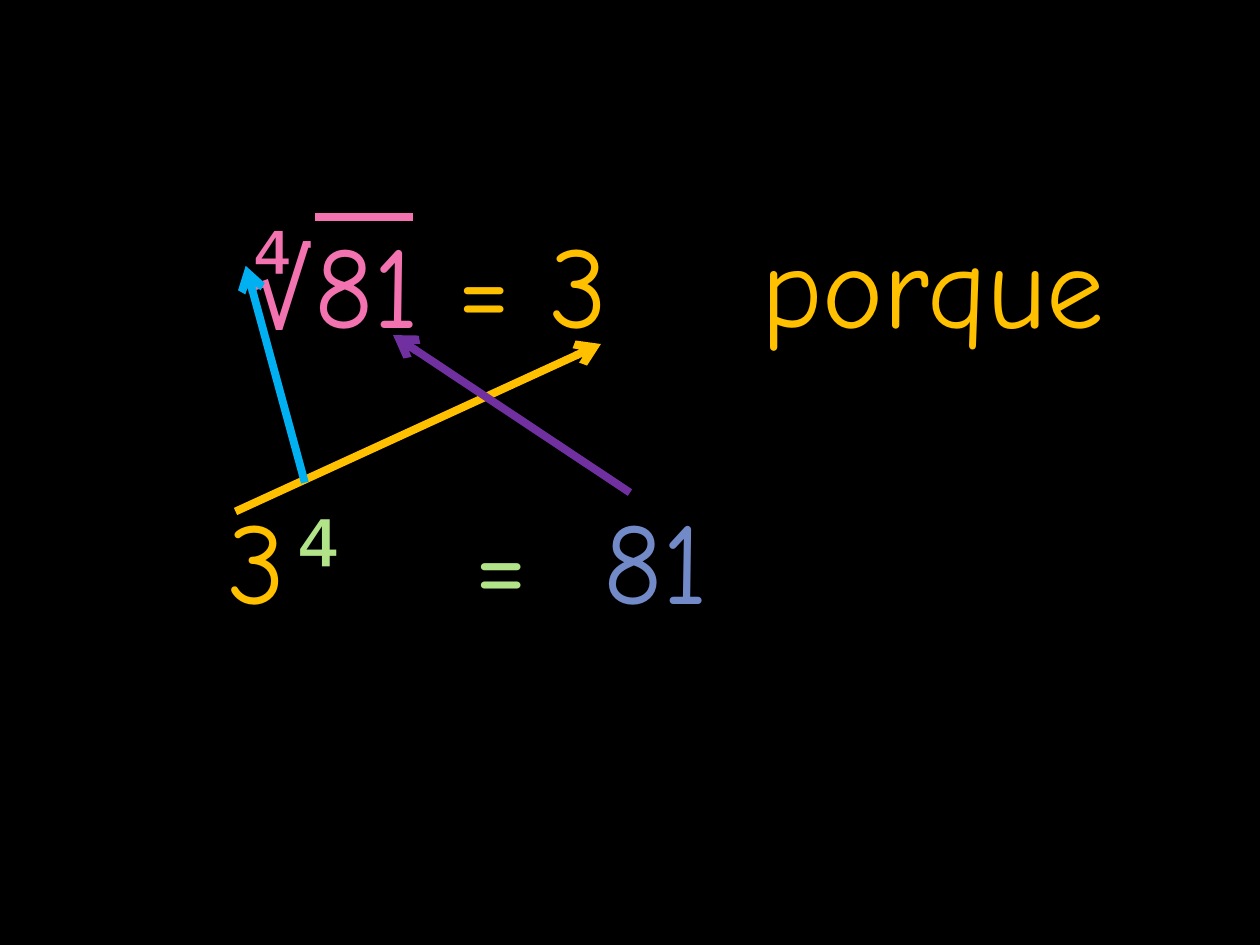
"""Build a slide that explains a fourth root through the matching power."""
import dataclasses

import pptx
import pptx.dml.color
import pptx.enum.shapes
import pptx.oxml
import pptx.oxml.ns
import pptx.util

Pt = pptx.util.Pt


@dataclasses.dataclass(frozen=True)
class Theme:
    back: str = "000000"
    gold: str = "FFC000"
    pink: str = "F273AF"
    green: str = "B2E389"
    blue: str = "738AC8"
    cyan: str = "00B0F0"
    purple: str = "7030A0"
    hand: str = "Comic Neue"
    mono: str = "DejaVu Sans Mono"
    root: float = 60
    size: float = 66
    line: float = 4.5


THEME = Theme()


@dataclasses.dataclass(frozen=True)
class Term:
    text: str
    color: str
    font: str = THEME.hand
    size: float = THEME.size


@dataclasses.dataclass(frozen=True)
class Row:
    terms: tuple[Term, ...]
    stops: tuple[float, ...]
    before: float = 0


@dataclasses.dataclass(frozen=True)
class Stroke:
    start: tuple[float, float]
    end: tuple[float, float]
    color: str
    arrow: bool = True


ROWS = (
    Row(
        (
            Term("\t∜", THEME.pink, THEME.mono, THEME.root),
            Term("81 ", THEME.pink),
            Term("= 3\tporque", THEME.gold),
        ),
        (102.5, 394),
    ),
    Row(
        (
            Term("\t3", THEME.gold),
            Term("⁴", THEME.green, THEME.mono),
            Term("\t=", THEME.green),
            Term("\t81", THEME.blue),
        ),
        (89, 230, 304),
        79,
    ),
)

STROKES = (
    Stroke((180, 123.8), (236, 123.8), THEME.pink, False),
    Stroke((134.6, 292.3), (343.4, 196.6), THEME.gold),
    Stroke((174.2, 275.8), (140.4, 151.9), THEME.cyan),
    Stroke((360, 281.5), (224.6, 191.5), THEME.purple),
)


def paint(name: str) -> pptx.dml.color.RGBColor:
    """Turn a hex name into a colour."""
    return pptx.dml.color.RGBColor.from_string(name)


def add_node(host, tag: str, **attrs: str):
    """Append a drawing element to its host."""
    node = pptx.oxml.parse_xml(f"<{tag} {pptx.oxml.ns.nsdecls('a')}/>")
    for key, value in attrs.items():
        node.set(key, value)
    host.append(node)
    return node


def write_row(para, row: Row) -> None:
    """Write one equation with its tab stops."""
    para.space_before = Pt(row.before)
    tabs = add_node(para._p.get_or_add_pPr(), "a:tabLst")
    for stop in row.stops:
        add_node(tabs, "a:tab", pos=str(int(Pt(stop))), algn="l")
    for term in row.terms:
        run = para.add_run()
        run.text = term.text
        run.font.name = term.font
        run.font.size = Pt(term.size)
        run.font.color.rgb = paint(term.color)


def draw_stroke(slide, stroke: Stroke) -> None:
    """Draw a line or an arrow."""
    line = slide.shapes.add_connector(
        pptx.enum.shapes.MSO_CONNECTOR.STRAIGHT,
        *(Pt(value) for value in stroke.start + stroke.end),
    )
    line.line.color.rgb = paint(stroke.color)
    line.line.width = Pt(THEME.line)
    props = line._element.spPr
    if stroke.arrow:
        add_node(props.get_or_add_ln(), "a:tailEnd", type="arrow")
    add_node(props, "a:effectLst")


def main() -> None:
    """Build and save the slide."""
    deck = pptx.Presentation()
    deck.slide_width, deck.slide_height = Pt(720), Pt(540)
    slide = deck.slides.add_slide(deck.slide_layouts[6])
    fill = slide.background.fill
    fill.solid()
    fill.fore_color.rgb = paint(THEME.back)

    box = slide.shapes.add_textbox(Pt(33.8), Pt(118), Pt(646.6), Pt(319))
    frame = box.text_frame
    frame.word_wrap = True
    for index, row in enumerate(ROWS):
        para = frame.add_paragraph() if index else frame.paragraphs[0]
        write_row(para, row)
    for stroke in STROKES:
        draw_stroke(slide, stroke)
    deck.save("out.pptx")


if __name__ == "__main__":
    main()
